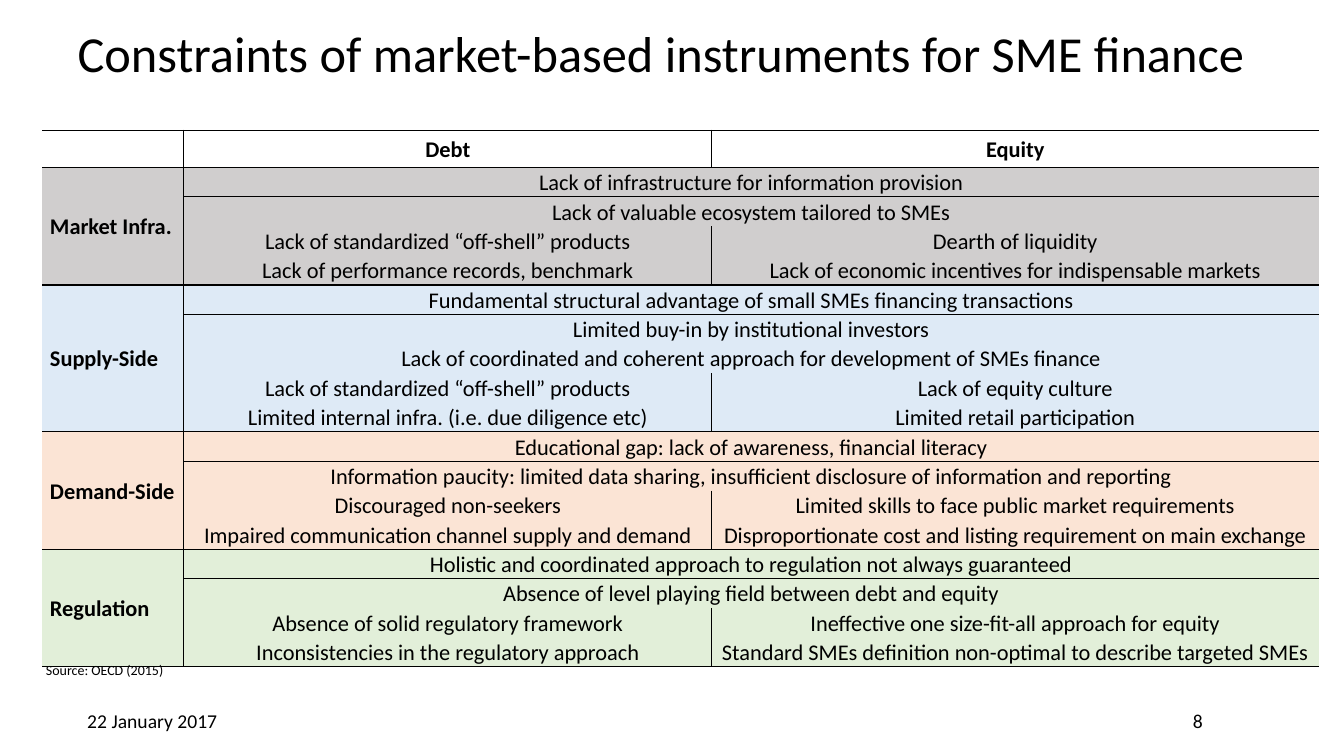
from lxml.etree import SubElement
from pptx import Presentation
from pptx.dml.color import RGBColor
from pptx.enum.text import MSO_ANCHOR as Anchor, PP_ALIGN as Align
from pptx.oxml.ns import qn
from pptx.util import Cm, Pt

FONT = "Calibri"
BLACK = RGBColor(0x00, 0x00, 0x00)
GREY = RGBColor(0xD0, 0xCE, 0xCE)
BLUE = RGBColor(0xDE, 0xEA, 0xF6)
ORANGE = RGBColor(0xFB, 0xE4, 0xD5)
GREEN = RGBColor(0xE2, 0xEF, 0xD9)
PLAIN_TABLE_STYLE = "{2D5ABB26-0587-4C30-8999-92F81FD0307C}"

HEADINGS = ["", "Debt", "Equity"]
COLUMN_WIDTHS = [Cm(3.56), Cm(13.31), Cm(15.29)]
HEADING_HEIGHT, ROW_HEIGHT = Cm(0.94), Cm(0.74)

# Each section: label, colour, constraints shared by both, (debt, equity) pairs
SECTIONS = [
    ("Market Infra.", GREY,
     ["Lack of infrastructure for information provision",
      "Lack of valuable ecosystem tailored to SMEs"],
     [("Lack of standardized “off-shell” products", "Dearth of liquidity"),
      ("Lack of performance records, benchmark",
       "Lack of economic incentives for indispensable markets")]),
    ("Supply-Side", BLUE,
     ["Fundamental structural advantage of small SMEs financing transactions",
      "Limited buy-in by institutional investors",
      "Lack of coordinated and coherent approach for development of SMEs finance"],
     [("Lack of standardized “off-shell” products", "Lack of equity culture"),
      ("Limited internal infra. (i.e. due diligence etc)",
       "Limited retail participation")]),
    ("Demand-Side", ORANGE,
     ["Educational gap: lack of awareness, financial literacy",
      "Information paucity: limited data sharing, insufficient disclosure of "
      "information and reporting"],
     [("Discouraged non-seekers",
       "Limited skills to face public market requirements"),
      ("Impaired communication channel supply and demand",
       "Disproportionate cost and listing requirement on main exchange")]),
    ("Regulation", GREEN,
     ["Holistic and coordinated approach to regulation not always guaranteed",
      "Absence of level playing field between debt and equity"],
     [("Absence of solid regulatory framework",
       "Ineffective one size-fit-all approach for equity"),
      ("Inconsistencies in the regulatory approach",
       "Standard SMEs definition non-optimal to describe targeted SMEs")]),
]


def write(frame, text, size, align, bold=False, spacing=None):
    frame.text = text
    paragraph = frame.paragraphs[0]
    paragraph.alignment = align
    paragraph.line_spacing = spacing
    # An empty cell has no run, so its paragraph carries the size
    for target in paragraph.runs or [paragraph]:
        target.font.name = FONT
        target.font.size = Pt(size)
        target.font.bold = bold
        target.font.color.rgb = BLACK


def add_label(slide, box, text, size, align, anchor):
    frame = slide.shapes.add_textbox(*map(Cm, box)).text_frame
    frame.word_wrap = True
    frame.vertical_anchor = anchor
    write(frame, text, size, align)


def draw_borders(cell, sides):
    properties = cell._tc.get_or_add_tcPr()
    for side in "LRTB":
        if side in sides:
            line = SubElement(properties, qn(f"a:ln{side}"), w=str(Pt(1)))
            fill = SubElement(line, qn("a:solidFill"))
            SubElement(fill, qn("a:srgbClr"), val=str(BLACK))


def fill_cell(cell, text, sides, color=None, align=Align.CENTER, bold=False,
              anchor=Anchor.TOP):
    draw_borders(cell, sides)
    if color is None:
        cell.fill.background()
    else:
        cell.fill.solid()
        cell.fill.fore_color.rgb = color
    cell.margin_left = cell.margin_right = Cm(0.19)
    cell.margin_top = cell.margin_bottom = 0
    cell.vertical_anchor = anchor
    write(cell.text_frame, text, 16, align, bold, 1.07)


def fill_section(table, top, label, color, shared, pairs):
    rows = [(text, "") for text in shared] + pairs
    last = len(rows) - 1
    for index, (debt, equity) in enumerate(rows):
        split = index >= len(shared)
        edges = ("T" if index == 0 else "") + ("B" if index == last else "")
        label_cell, debt_cell, equity_cell = (
            table.cell(top + index, column) for column in range(3))
        fill_cell(label_cell, label if index == 0 else "", "RTB" if index == 0 else "R" + edges,
                  color, Align.LEFT, True, Anchor.MIDDLE)
        fill_cell(debt_cell, debt, edges + ("LR" if split else "L"), color)
        fill_cell(equity_cell, equity, edges + ("L" if split else ""), color)
        if not split:
            debt_cell.merge(equity_cell)
    table.cell(top, 0).merge(table.cell(top + last, 0))
    return top + len(rows)


def add_constraints_table(slide):
    row_count = 1 + sum(len(shared) + len(pairs) for _, _, shared, pairs in SECTIONS)
    table = slide.shapes.add_table(
        row_count, len(HEADINGS), Cm(1.07), Cm(3.28), sum(COLUMN_WIDTHS),
        HEADING_HEIGHT + ROW_HEIGHT * (row_count - 1)).table
    table.first_row = table.horz_banding = False
    table._tbl.tblPr.find(qn("a:tableStyleId")).text = PLAIN_TABLE_STYLE
    for column, width in zip(table.columns, COLUMN_WIDTHS):
        column.width = width
    for row in table.rows:
        row.height = ROW_HEIGHT
    table.rows[0].height = HEADING_HEIGHT

    # Heading row, then the coloured sections
    for column, (heading, sides) in enumerate(zip(HEADINGS, ["RTB", "LRTB", "LTB"])):
        fill_cell(table.cell(0, column), heading, sides, bold=True, anchor=Anchor.MIDDLE)
    top = 1
    for section in SECTIONS:
        top = fill_section(table, top, *section)


def add_title(slide, text):
    title = slide.shapes.title
    title.left, title.top, title.width, title.height = map(Cm, (1.7, 0.05, 30.89, 2.74))
    title.text_frame.vertical_anchor = Anchor.MIDDLE
    write(title.text_frame, text, 36, Align.LEFT, spacing=0.9)


def main():
    deck = Presentation()
    deck.slide_width, deck.slide_height = Cm(33.87), Cm(19.05)
    slide = deck.slides.add_slide(deck.slide_layouts[5])

    add_title(slide, "Constraints of market-based instruments for SME finance")
    add_constraints_table(slide)

    # Source line, date and page number
    add_label(slide, (0.91, 16.54, 16.94, 0.69), "Source: OECD (2015)", 10,
              Align.LEFT, Anchor.TOP)
    add_label(slide, (0.03, 17.65, 7.62, 1.02), "22 January 2017", 14,
              Align.CENTER, Anchor.MIDDLE)
    add_label(slide, (26.54, 17.65, 7.29, 1.02), "8", 14, Align.CENTER, Anchor.MIDDLE)

    deck.save("out.pptx")


if __name__ == "__main__":
    main()
